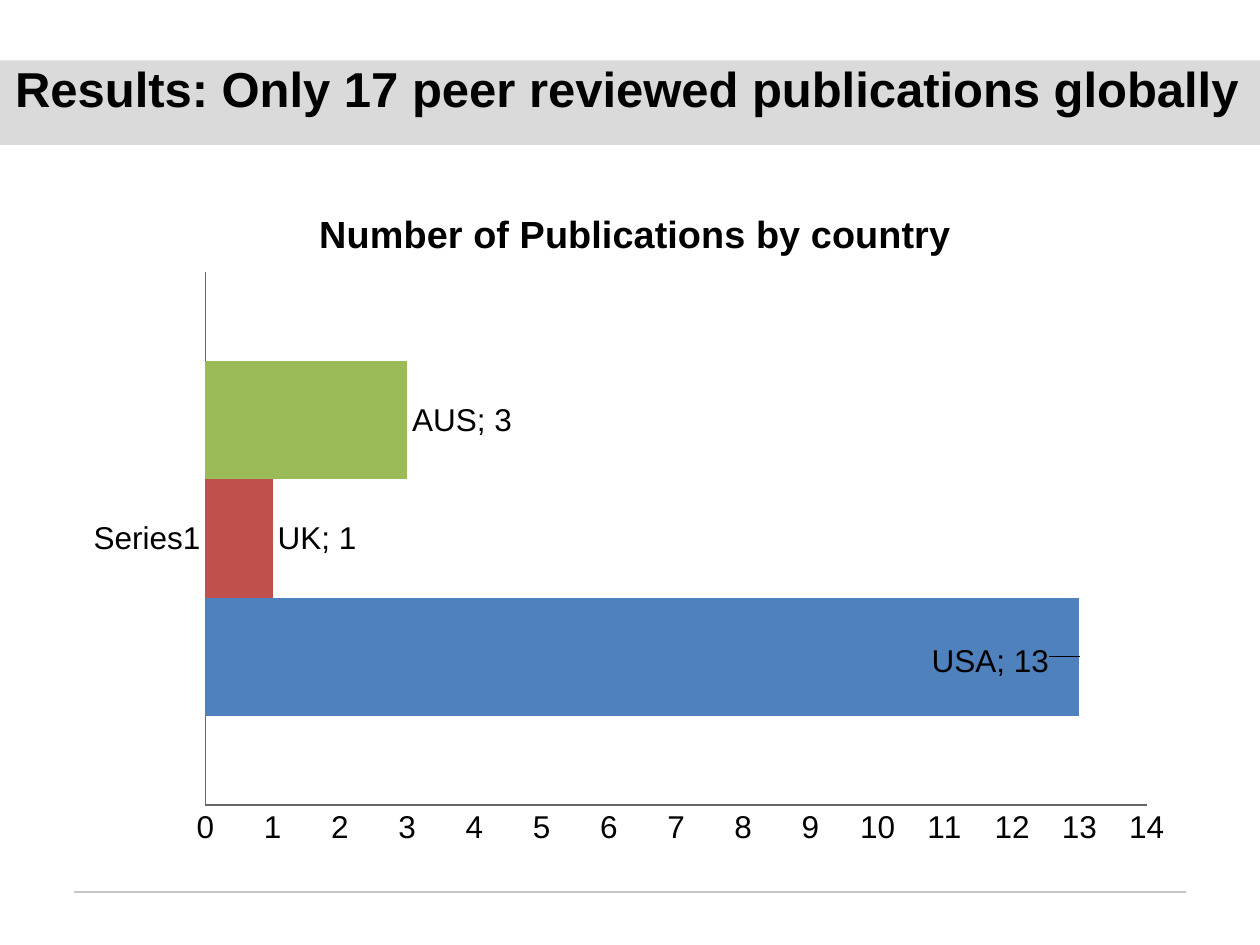
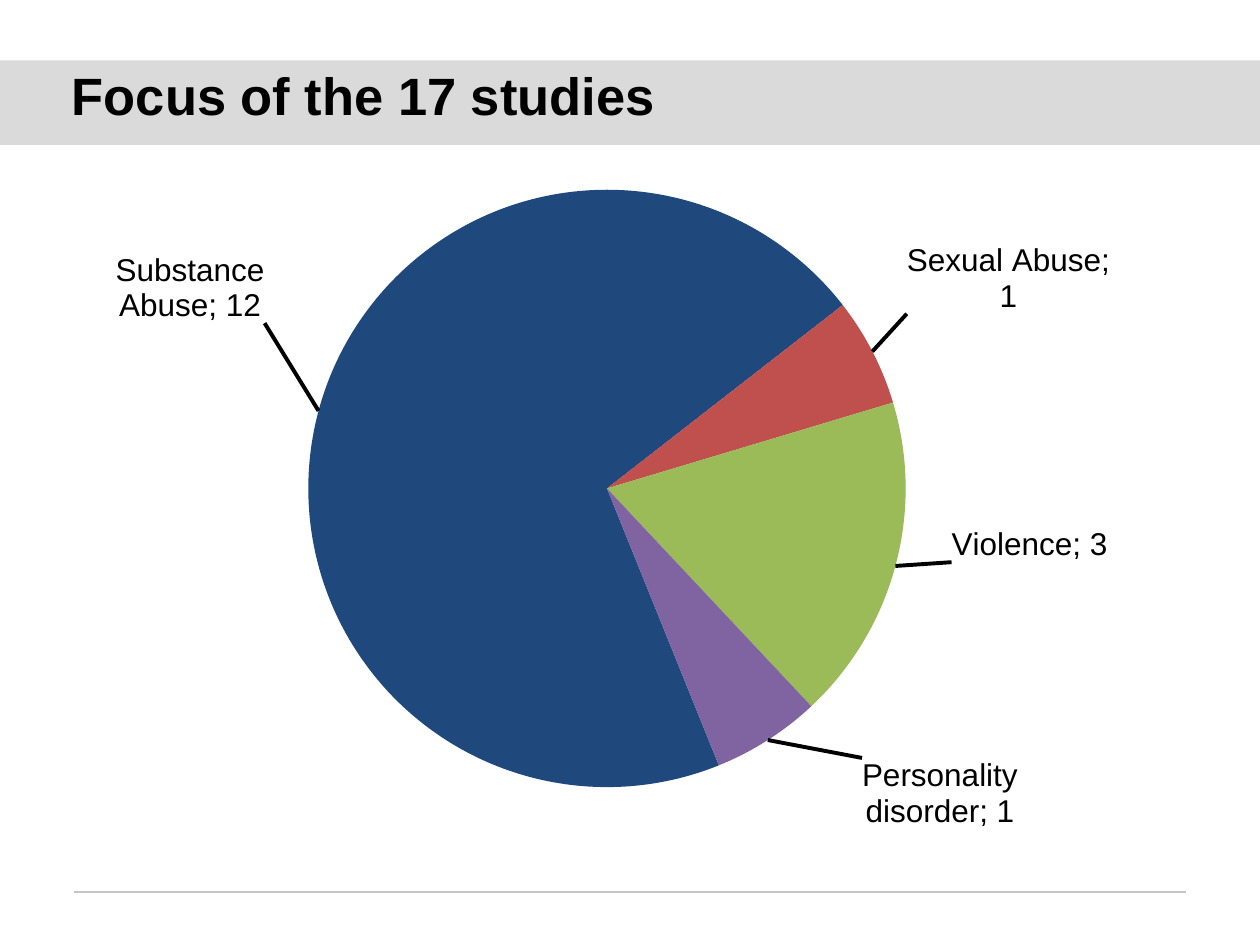
from copy import deepcopy

from pptx import Presentation
from pptx.chart.data import CategoryChartData
from pptx.dml.color import RGBColor
from pptx.enum.chart import XL_CHART_TYPE as ChartType
from pptx.enum.chart import XL_LABEL_POSITION as LabelPosition
from pptx.enum.chart import XL_TICK_MARK as TickMark
from pptx.enum.shapes import MSO_CONNECTOR, MSO_SHAPE
from pptx.enum.text import MSO_ANCHOR, MSO_AUTO_SIZE, PP_ALIGN
from pptx.oxml import parse_xml
from pptx.oxml.ns import nsdecls, qn
from pptx.util import Inches, Pt

FONT = "Arial"
BLACK, BAND, RULE, AXIS = "000000", "DADADA", "C6C6C6", "666666"
BLUE, NAVY, RED, GREEN, PURPLE = "4F81BD", "1F497D", "C0504D", "9BBB59", "8064A2"
CHART_BOX = (0.57, 1.37, 8.84, 5.45)


def paint(target, color):
    """Give a fill a solid colour from a hex string."""
    target.solid()
    target.fore_color.rgb = RGBColor.from_string(color)


def stroke(line, color, width):
    """Set the colour and width of a line."""
    paint(line.fill, color)
    line.width = Pt(width)


def style_font(font, size, bold=False):
    """Apply the shared typeface and text colour."""
    font.name, font.size, font.bold = FONT, Pt(size), bold
    font.color.rgb = RGBColor.from_string(BLACK)


def add_shared_parts(slide):
    """Draw the title band and the footer rule, and move them to the layout."""
    band = slide.shapes.add_shape(
        MSO_SHAPE.RECTANGLE, 0, Inches(0.48), Inches(10), Inches(0.67))
    band.shadow.inherit = False
    paint(band.fill, BAND)
    band.line.fill.background()
    rule = slide.shapes.add_connector(
        MSO_CONNECTOR.STRAIGHT, Inches(0.59), Inches(7.08), Inches(9.41), Inches(7.08))
    stroke(rule.line, RULE, 0.75)
    rule.element.spPr.append(parse_xml(f"<a:effectLst {nsdecls('a')}/>"))
    for part in (band, rule):
        slide.slide_layout.shapes.element.append(part.element)


def set_title(slide, text, box, size):
    """Place and format the title placeholder."""
    title = slide.shapes.title
    title.left, title.top, title.width, title.height = map(Inches, box)
    frame = title.text_frame
    frame.text = text
    frame.margin_left = frame.margin_top = frame.margin_right = frame.margin_bottom = 0
    frame.auto_size = MSO_AUTO_SIZE.NONE
    frame.vertical_anchor = MSO_ANCHOR.TOP
    paragraph = frame.paragraphs[0]
    paragraph.alignment = PP_ALIGN.LEFT
    paragraph.line_spacing = 0.9
    style_font(paragraph.runs[0].font, size, bold=True)


def manual_layout(modes="", **sizes):
    """Return a chart layout element with the given fractions."""
    values = "".join(f'<c:{name} val="{value}"/>' for name, value in sizes.items())
    return parse_xml(f"<c:layout {nsdecls('c')}><c:manualLayout>{modes}{values}"
                     "</c:manualLayout></c:layout>")


def edge_layout(target="", **sizes):
    """Return a layout measured from the chart's top left corner."""
    return manual_layout(target + '<c:xMode val="edge"/><c:yMode val="edge"/>', **sizes)


def add_chart(slide, kind, data, box, plot_area):
    """Add a chart with shared text style and a fixed inner plot area."""
    chart = slide.shapes.add_chart(kind, *map(Inches, box), data).chart
    chart.has_legend = False
    style_font(chart.font, 18)
    area = chart.element.find(".//" + qn("c:plotArea"))
    for layout in area.findall(qn("c:layout")):
        area.remove(layout)
    sizes = dict(zip("xywh", plot_area))
    area.insert(0, edge_layout('<c:layoutTarget val="inner"/>', **sizes))
    return chart


def label_series(chart, series, offsets, by_series=False):
    """Show name and value outside each point, moved by the offsets given."""
    labels = series.data_labels
    labels.show_value = True
    labels.show_series_name = by_series
    labels.show_category_name = not by_series
    labels.position = LabelPosition.OUTSIDE_END
    style_font(labels.font, 18)
    element = list(chart.element.iter(qn("c:dLbls")))[-1]
    leader = element.find(qn("c:showLeaderLines"))
    leader.addprevious(parse_xml(f"<c:separator {nsdecls('c')}>; </c:separator>"))
    shared = [child for child in element if child is not leader]
    for index, (x, y) in enumerate(offsets):
        label = parse_xml(f'<c:dLbl {nsdecls("c")}><c:idx val="{index}"/></c:dLbl>')
        label.append(manual_layout(x=x, y=y))
        label.extend(deepcopy(child) for child in shared)
        element.insert(index, label)
    return element


def add_country_chart(slide, box):
    """Draw the bars of publications by country."""
    countries = [("USA", 13, BLUE, [(-0.137, 0.007)]), ("UK", 1, RED, []),
                 ("AUS", 3, GREEN, [])]
    data = CategoryChartData()
    data.categories = ["Series1"]
    for name, count, _, _ in countries:
        data.add_series(name, [count])
    chart = add_chart(slide, ChartType.BAR_CLUSTERED, data, box,
                      (0.12, 0.145, 0.845, 0.776))
    chart.has_title = True
    frame = chart.chart_title.text_frame
    frame.text = "Number of Publications by country"
    style_font(frame.paragraphs[0].runs[0].font, 21.6, bold=True)
    title = chart.element.find(".//" + qn("c:title"))
    for layout in title.findall(qn("c:layout")):
        title.remove(layout)
    title.find(qn("c:tx")).addnext(edge_layout(x=0.216, y=0.044))
    plot = chart.plots[0]
    plot.gap_width, plot.overlap, plot.vary_by_categories = 150, 0, False
    for series, (_, _, color, offsets) in zip(plot.series, countries):
        paint(series.format.fill, color)
        label_series(chart, series, offsets, by_series=True)
    for axis in (chart.category_axis, chart.value_axis):
        axis.has_major_gridlines = False
        axis.major_tick_mark = axis.minor_tick_mark = TickMark.NONE
        stroke(axis.format.line, AXIS, 0.75)
        style_font(axis.tick_labels.font, 18)
    chart.value_axis.minimum_scale, chart.value_axis.maximum_scale = 0, 14
    chart.value_axis.major_unit = 1


def add_focus_chart(slide, box):
    """Draw the pie of study topics with leader lines."""
    topics = [("Substance Abuse", 12, NAVY, (-0.042, -0.125)),
              ("Sexual Abuse", 1, RED, (0.025, -0.05)),
              ("Violence", 3, GREEN, (0.044, -0.06)),
              ("Personality disorder", 1, PURPLE, (0.081, 0.017))]
    names, counts, colors, offsets = zip(*topics)
    data = CategoryChartData()
    data.categories = names
    data.add_series("Series 1", counts)
    chart = add_chart(slide, ChartType.PIE, data, box, (0.212, 0.025, 0.537, 0.87))
    chart.has_title = False
    series = chart.plots[0].series[0]
    for index, color in enumerate(colors):
        paint(series.points[index].format.fill, color)
    labels = label_series(chart, series, offsets)
    labels.append(parse_xml(
        f'<c:leaderLines {nsdecls("c", "a")}><c:spPr><a:ln w="{Pt(2.25)}"><a:solidFill>'
        f'<a:srgbClr val="{BLACK}"/></a:solidFill></a:ln></c:spPr></c:leaderLines>'))
    chart.element.find(".//" + qn("c:pieChart")).append(
        parse_xml(f'<c:firstSliceAng {nsdecls("c")} val="158"/>'))


def main():
    """Build and save the two result slides."""
    presentation = Presentation()
    presentation.slide_width, presentation.slide_height = Inches(10), Inches(7.5)
    layout = presentation.slide_layouts[5]
    results = presentation.slides.add_slide(layout)
    add_shared_parts(results)
    set_title(results, "Results: Only 17 peer reviewed publications globally",
              (0.12, 0.52, 9.8, 0.45), 28)
    add_country_chart(results, CHART_BOX)
    focus = presentation.slides.add_slide(layout)
    set_title(focus, "Focus of the 17 studies", (0.57, 0.56, 8.84, 0.45), 30)
    add_focus_chart(focus, CHART_BOX)
    presentation.save("out.pptx")


if __name__ == "__main__":
    main()
